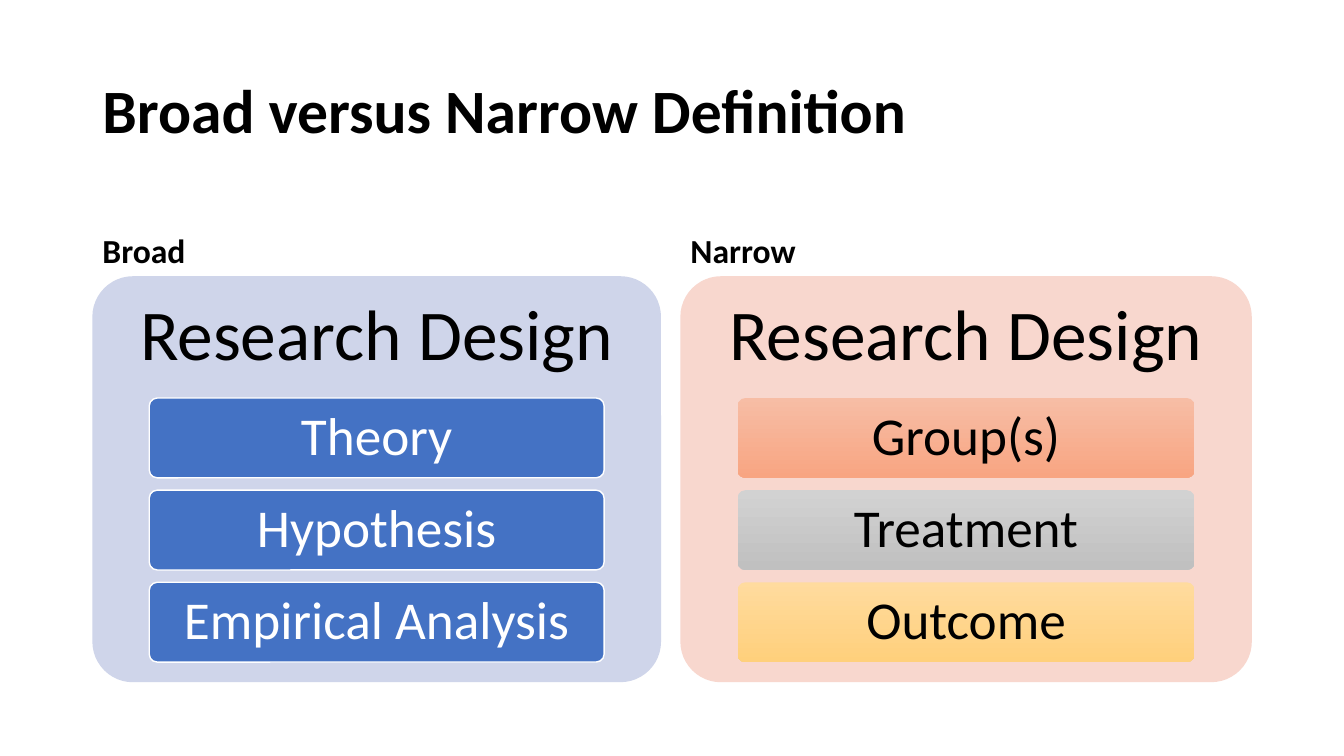
from dataclasses import dataclass

from pptx import Presentation
from pptx.dml.color import RGBColor
from pptx.enum.shapes import MSO_SHAPE
from pptx.enum.text import MSO_ANCHOR, MSO_AUTO_SIZE, PP_ALIGN
from pptx.util import Pt

ROUNDED = MSO_SHAPE.ROUNDED_RECTANGLE
MIDDLE, BOTTOM = MSO_ANCHOR.MIDDLE, MSO_ANCHOR.BOTTOM
LEFT, CENTER = PP_ALIGN.LEFT, PP_ALIGN.CENTER
NO_AUTOFIT = MSO_AUTO_SIZE.NONE

BLACK = RGBColor(0x00, 0x00, 0x00)
WHITE = RGBColor(0xFF, 0xFF, 0xFF)
BLUE = RGBColor(0x44, 0x72, 0xC4)
PALE_BLUE = RGBColor(0xCF, 0xD5, 0xEA)
PALE_ORANGE = RGBColor(0xF8, 0xD7, 0xCE)
ORANGE = (RGBColor(0xF7, 0xBD, 0xA5), RGBColor(0xF8, 0xA5, 0x82))
GRAY = (RGBColor(0xD2, 0xD2, 0xD2), RGBColor(0xC0, 0xC0, 0xC0))
GOLD = (RGBColor(0xFF, 0xDB, 0x9E), RGBColor(0xFF, 0xD0, 0x7C))

FONT = "Calibri"
LABEL_TOP, LABEL_HEIGHT = 132.4, 64.9
PANEL_TOP, PANEL_HEIGHT = 197.3, 290
HEADING_HEIGHT = 0.3 * PANEL_HEIGHT
ITEM_HEIGHT, ITEM_PITCH = 57, 65.8


@dataclass(frozen=True)
class Item:
    text: str
    colors: tuple[RGBColor, ...]  # one colour is solid, two are a gradient


@dataclass(frozen=True)
class Panel:
    label: str
    label_index: int
    left: float
    width: float
    color: RGBColor
    text_color: RGBColor
    items: tuple[Item, ...]


PANELS = (
    Panel("Broad", 1, 66, 406.2, PALE_BLUE, WHITE,
          (Item("Theory", (BLUE,)), Item("Hypothesis", (BLUE,)),
           Item("Empirical Analysis", (BLUE,)))),
    Panel("Narrow", 3, 486, 408.2, PALE_ORANGE, BLACK,
          (Item("Group(s)", ORANGE), Item("Treatment", GRAY),
           Item("Outcome", GOLD))),
)


def place(box, left: float, top: float, width: float, height: float) -> None:
    box.left, box.top = Pt(left), Pt(top)
    box.width, box.height = Pt(width), Pt(height)


def write(box, text: str, size: float, color: RGBColor, bold: bool = False,
          align=CENTER, anchor=MIDDLE, before: float = 0) -> None:
    frame = box.text_frame
    frame.text = text
    frame.word_wrap = True
    frame.auto_size = NO_AUTOFIT
    frame.vertical_anchor = anchor
    para = frame.paragraphs[0]
    para.alignment = align
    para.line_spacing = 0.9
    para.space_before = Pt(before)
    para.font.name, para.font.size, para.font.bold = FONT, Pt(size), bold
    para.font.color.rgb = color


def set_margins(box, across: float, down: float) -> None:
    frame = box.text_frame
    frame.margin_left = frame.margin_right = Pt(across)
    frame.margin_top = frame.margin_bottom = Pt(down)


def add_rounded(page, left: float, top: float, width: float, height: float,
                colors: tuple[RGBColor, ...]):
    box = page.shapes.add_shape(ROUNDED, Pt(left), Pt(top), Pt(width), Pt(height))
    box.adjustments[0] = 0.1
    box.shadow.inherit = False
    box.line.fill.background()
    if len(colors) == 1:
        box.fill.solid()
        box.fill.fore_color.rgb = colors[0]
    else:
        box.fill.gradient()
        box.fill.gradient_angle = 270
        for stop, color, position in zip(box.fill.gradient_stops, colors, (0, 1)):
            stop.color.rgb, stop.position = color, position
    return box


def add_panel(page, panel: Panel) -> None:
    # Label above the panel
    label = page.placeholders[panel.label_index]
    place(label, panel.left, LABEL_TOP, panel.width, LABEL_HEIGHT)
    write(label, panel.label, 24, BLACK, True, LEFT, BOTTOM, 10)

    # Background and heading
    add_rounded(page, panel.left, PANEL_TOP, panel.width, PANEL_HEIGHT, (panel.color,))
    heading = page.shapes.add_textbox(Pt(panel.left), Pt(PANEL_TOP),
                                      Pt(panel.width), Pt(HEADING_HEIGHT))
    write(heading, "Research Design", 51, BLACK)
    set_margins(heading, 15, 15)

    # Stacked items
    for row, item in enumerate(panel.items):
        top = PANEL_TOP + HEADING_HEIGHT + row * ITEM_PITCH
        box = add_rounded(page, panel.left + 0.1 * panel.width, top,
                          0.8 * panel.width, ITEM_HEIGHT, item.colors)
        if len(item.colors) == 1:
            box.line.color.rgb = WHITE
            box.line.width = Pt(1)
        write(box, item.text, 38, panel.text_color)
        set_margins(box, 8, 6)


def main() -> None:
    deck = Presentation()
    deck.slide_width, deck.slide_height = Pt(960), Pt(540)
    page = deck.slides.add_slide(deck.slide_layouts.get_by_name("Comparison"))

    # Title
    title = page.shapes.title
    place(title, 66, 28.8, 828, 104.4)
    write(title, "Broad versus Narrow Definition", 44, BLACK, True, LEFT)

    # Two definitions
    for panel in PANELS:
        add_panel(page, panel)

    # Unused content placeholders
    for box in list(page.placeholders):
        if not box.text_frame.text:
            box.element.getparent().remove(box.element)

    deck.save("out.pptx")


if __name__ == "__main__":
    main()
